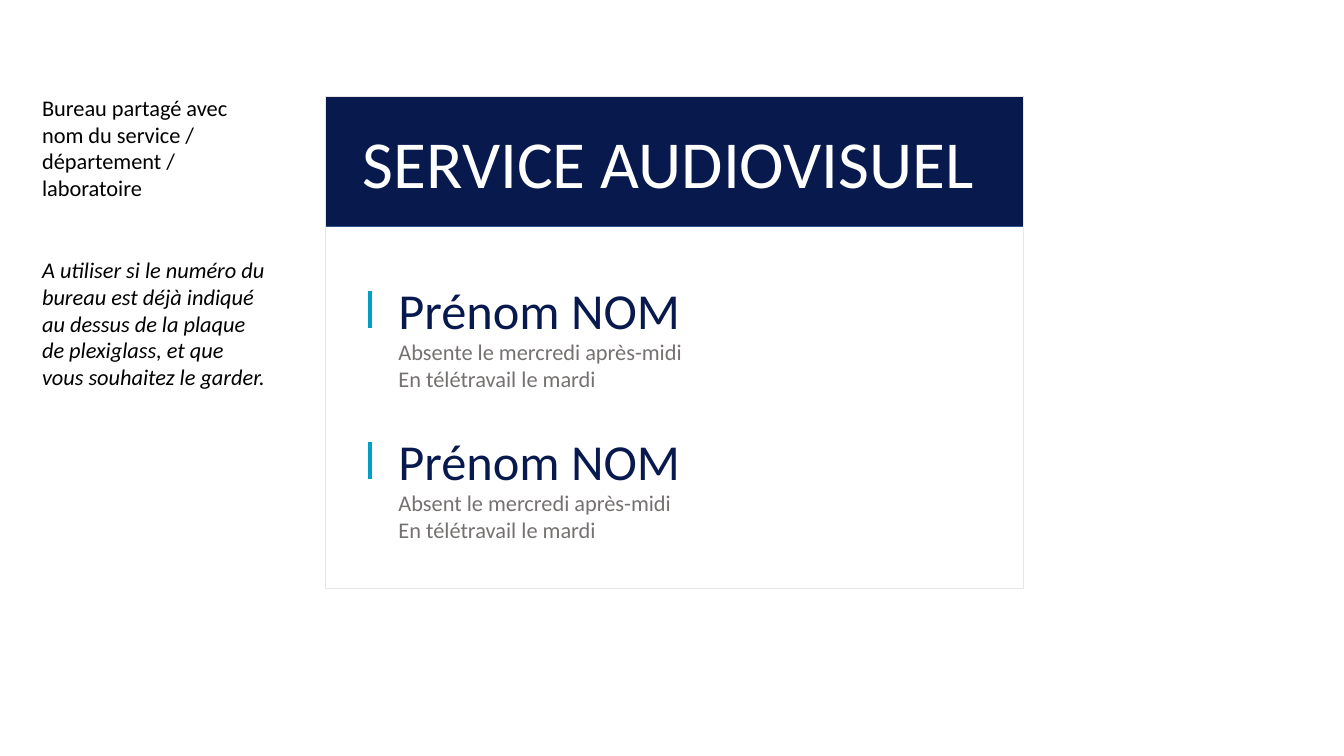
from pptx import Presentation
from pptx.dml.color import RGBColor
from pptx.enum.shapes import MSO_CONNECTOR as CONN, MSO_SHAPE as SHAPE
from pptx.enum.text import MSO_ANCHOR as ANCHOR, MSO_AUTO_SIZE as AUTO, PP_ALIGN as ALIGN
from pptx.oxml.ns import qn
from pptx.util import Pt
from lxml import etree

NAVY = RGBColor(0x08, 0x19, 0x4E)
EDGE = RGBColor(0x32, 0x54, 0x91)
PALE = RGBColor(0xE7, 0xE6, 0xE6)
CYAN = RGBColor(0x00, 0xA0, 0xC6)
GREY = RGBColor(0x76, 0x71, 0x71)
BLACK = RGBColor(0, 0, 0)
WHITE = RGBColor(255, 255, 255)


def write(p, text, size=16, color=BLACK, italic=False, before=0):
    p.alignment = ALIGN.LEFT
    p.line_spacing = 1.0
    p.space_before = Pt(before)
    r = p.add_run()
    r.text = text
    r.font.name = "Calibri"
    r.font.size = Pt(size)
    r.font.italic = italic
    r.font.color.rgb = color


class DoorSign:
    """Holds the slide and the text style of the door sign."""

    def __init__(self, prs):
        self.s = prs.slides.add_slide(prs.slide_layouts[5])

    def box(self, x, y, w, h, line, fill=None):
        sp = self.s.shapes.add_shape(SHAPE.RECTANGLE, Pt(x), Pt(y), Pt(w), Pt(h))
        sp.shadow.inherit = False
        if fill is None:
            sp.fill.background()
        else:
            sp.fill.solid()
            sp.fill.fore_color.rgb = fill
        sp.line.color.rgb = line
        sp.line.width = Pt(1)

    def frame(self, sp):
        tf = sp.text_frame
        tf.word_wrap = True
        tf.auto_size = AUTO.SHAPE_TO_FIT_TEXT
        tf.vertical_anchor = ANCHOR.TOP
        return tf

    def title(self, x, y, w, h, text, **style):
        sp = self.s.shapes.title
        sp.left, sp.top, sp.width, sp.height = Pt(x), Pt(y), Pt(w), Pt(h)
        write(self.frame(sp).paragraphs[0], text, **style)
        self.s.shapes._spTree.append(sp._element)  # bring in front of the band

    def text(self, x, y, w, h, *paragraphs):
        """Each paragraph is a pair: its text and a dict of format keywords."""
        sp = self.s.shapes.add_textbox(Pt(x), Pt(y), Pt(w), Pt(h))
        tf = self.frame(sp)
        for i, (text, style) in enumerate(paragraphs):
            write(tf.add_paragraph() if i else tf.paragraphs[0], text, **style)

    def bar(self, x, y, h):
        c = self.s.shapes.add_connector(CONN.STRAIGHT, Pt(x), Pt(y), Pt(x), Pt(y + h))
        c.line.color.rgb = CYAN
        c.line.width = Pt(2.75)
        etree.SubElement(c._element.spPr, qn("a:effectLst"))

    def person(self, y, name, *absences):
        self.text(277.5, y, 411, 51, (name, dict(size=36, color=NAVY)))
        self.text(277.5, y + 42, 411, 46, *[(a, dict(color=GREY)) for a in absences])
        self.bar(264, y + 12, 26)


def main():
    prs = Presentation()
    prs.slide_width, prs.slide_height = Pt(960), Pt(540)
    sign = DoorSign(prs)
    sign.box(232.5, 69, 498.5, 93, EDGE, NAVY)
    sign.box(232.5, 69, 498.5, 351.5, PALE)
    sign.title(252, 83, 457, 65.5, "SERVICE AUDIOVISUEL", size=48, color=WHITE)
    sign.text(
        23, 63.5, 175, 220,
        ("Bureau partagé avec nom du service / département / laboratoire", {}),
        ("A utiliser si le numéro du bureau est déjà indiqué au dessus de la "
         "plaque de plexiglass, et que vous souhaitez le garder.",
         dict(italic=True, before=39)),
    )
    for i, absent in enumerate(["Absente", "Absent"]):
        sign.person(196 + 108 * i, "Prénom NOM",
                    f"{absent} le mercredi après-midi", "En télétravail le mardi")
    prs.save("out.pptx")


if __name__ == "__main__":
    main()
